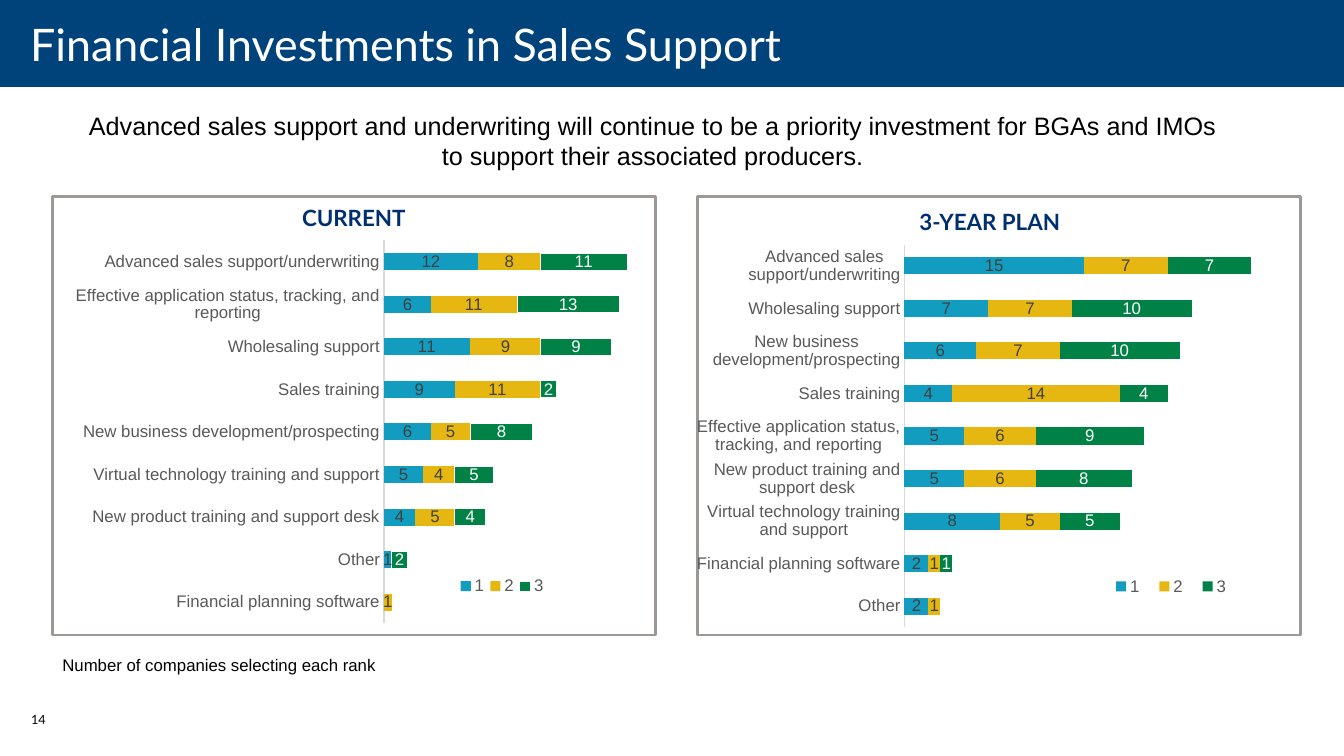
from lxml.etree import SubElement
from pptx import Presentation
from pptx.chart.data import CategoryChartData
from pptx.dml.color import RGBColor
from pptx.enum.chart import (XL_CHART_TYPE, XL_LABEL_POSITION,
                             XL_LEGEND_POSITION, XL_TICK_MARK)
from pptx.enum.shapes import MSO_SHAPE
from pptx.enum.text import MSO_ANCHOR, PP_ALIGN
from pptx.oxml import parse_xml
from pptx.oxml.ns import nsdecls, qn
from pptx.util import Pt

COLORS = {
    "banner": "00437B", "white": "FFFFFF", "black": "000000",
    "frame": "9D9795", "heading": "002F70", "axis_text": "595959",
    "axis_line": "D9D9D9", "label": "404040",
    "rank1": "129DC0", "rank2": "E6B711", "rank3": "008145",
}
RANKS = [("1", "rank1", "label"), ("2", "rank2", "label"), ("3", "rank3", "white")]
PANEL_TOP, PANEL_W, PANEL_H = 140.4, 430.56, 313.2
CHART_H = 274.3

# Each row: category, then the counts for ranks 1, 2 and 3, from bottom to top
CURRENT = [
    ("Financial planning software", 0, 1, 0),
    ("Other", 1, 0, 2),
    ("New product training and support desk", 4, 5, 4),
    ("Virtual technology training and support", 5, 4, 5),
    ("New business development/prospecting", 6, 5, 8),
    ("Sales training", 9, 11, 2),
    ("Wholesaling support", 11, 9, 9),
    ("Effective application status, tracking, and reporting", 6, 11, 13),
    ("Advanced sales support/underwriting", 12, 8, 11),
]
PLAN = [
    ("Other", 2, 1, 0),
    ("Financial planning software", 2, 1, 1),
    ("Virtual technology training and support", 8, 5, 5),
    ("New product training and support desk", 5, 6, 8),
    ("Effective application status, tracking, and reporting", 5, 6, 9),
    ("Sales training", 4, 14, 4),
    ("New business development/prospecting", 6, 7, 10),
    ("Wholesaling support", 7, 7, 10),
    ("Advanced sales support/underwriting", 15, 7, 7),
]


def rgb(name):
    return RGBColor.from_string(COLORS[name])


def style_font(font, size, color, name="Arial", bold=False):
    font.size, font.name, font.bold = Pt(size), name, bold
    font.color.rgb = rgb(color)


def add_rect(s, x, y, w, h, fill=None, line=None):
    sp = s.shapes.add_shape(MSO_SHAPE.RECTANGLE, Pt(x), Pt(y), Pt(w), Pt(h))
    sp.shadow.inherit = False
    if fill:
        sp.fill.solid()
        sp.fill.fore_color.rgb = rgb(fill)
    else:
        sp.fill.background()
    if line:
        sp.line.color.rgb = rgb(line)
        sp.line.width = Pt(2)
    else:
        sp.line.fill.background()
    return sp


def add_text(s, text, x, y, w, h, size, color="black", name="Arial", bold=False,
             align=PP_ALIGN.LEFT, anchor=MSO_ANCHOR.TOP):
    tf = s.shapes.add_textbox(Pt(x), Pt(y), Pt(w), Pt(h)).text_frame
    tf.word_wrap = True
    tf.vertical_anchor = anchor
    p = tf.paragraphs[0]
    p.text = text
    p.alignment = align
    style_font(p.font, size, color, name, bold)
    return tf


def set_layout(parent, index, x, y, w, h, inner=False):
    """Place a plot area or legend by fractions of the chart."""
    for old in parent.findall(qn("c:layout")):
        parent.remove(old)
    layout = parse_xml(f"<c:layout {nsdecls('c')}/>")
    manual = SubElement(layout, qn("c:manualLayout"))
    settings = [("layoutTarget", "inner")] if inner else []
    settings += [("xMode", "edge"), ("yMode", "edge"),
                 ("x", x), ("y", y), ("w", w), ("h", h)]
    for tag, value in settings:
        SubElement(manual, qn(f"c:{tag}")).set("val", str(value))
    parent.insert(index, layout)


def add_rank_chart(s, rows, x, y, w, h, plot_box, legend_box, outlined):
    data = CategoryChartData()
    data.categories = [row[0] for row in rows]
    for i, (rank, _, _) in enumerate(RANKS, 1):
        data.add_series(rank, [row[i] for row in rows])
    chart = s.shapes.add_chart(XL_CHART_TYPE.BAR_STACKED, Pt(x), Pt(y),
                               Pt(w), Pt(h), data).chart
    chart.has_title = False
    style_font(chart.font, 10, "black")

    axis = chart.category_axis
    axis.major_tick_mark = axis.minor_tick_mark = XL_TICK_MARK.NONE
    axis.format.line.color.rgb = rgb("axis_line")
    axis.format.line.width = Pt(0.75)
    style_font(axis.tick_labels.font, 12, "axis_text")
    values = chart.value_axis
    values.minimum_scale, values.maximum_scale = 0, 35
    values.has_major_gridlines = False
    values.visible = False

    plot = chart.plots[0]
    plot.gap_width, plot.overlap = 150, 100
    plot.vary_by_categories = False
    for series, (_, fill, label) in zip(plot.series, RANKS):
        series.format.fill.solid()
        series.format.fill.fore_color.rgb = rgb(fill)
        labels = series.data_labels
        labels.show_value = True
        labels.position = XL_LABEL_POSITION.CENTER
        labels.number_format = "0;;"  # zeros stay unlabelled
        labels.number_format_is_linked = False
        style_font(labels.font, 12, label)
    if outlined:
        line = plot.series[-1].format.line
        line.color.rgb = rgb("white")
        line.width = Pt(0.75)

    chart.has_legend = True
    legend = chart.legend
    legend.position = XL_LEGEND_POSITION.BOTTOM
    legend.include_in_layout = False
    style_font(legend.font, 12, "axis_text")
    root = chart.element
    set_layout(root.find(".//" + qn("c:plotArea")), 0, *plot_box, inner=True)
    set_layout(root.find(".//" + qn("c:legend")), 1, *legend_box)


def add_panel(s, x, heading, rows, dx, dy, chart_w, plot_box, legend_box,
              outlined=False):
    """Framed panel; dx and dy shift its heading and chart."""
    add_rect(s, x, PANEL_TOP, PANEL_W, PANEL_H, line="frame")
    top = PANEL_TOP + dy
    tf = add_text(s, heading, x + dx, top, PANEL_W, 31.7, 16, "heading", "Lato",
                  True, PP_ALIGN.CENTER, MSO_ANCHOR.MIDDLE)
    tf.paragraphs[0].line_spacing = 1.2
    tf.paragraphs[0].space_after = Pt(12.6)
    add_rank_chart(s, rows, x + dx, top + 33.9, chart_w, CHART_H,
                   plot_box, legend_box, outlined)


def add_banner(s, title, w, h):
    add_rect(s, 0, 0, w, h, fill="banner")
    tf = add_text(s, title, 0, -3.6, w, 69.8, 32, "white", "Lato",
                  anchor=MSO_ANCHOR.MIDDLE)
    tf.margin_left, tf.margin_right = Pt(21.6), Pt(14.4)
    tf.margin_top = tf.margin_bottom = 0


def main():
    prs = Presentation()
    prs.slide_width, prs.slide_height = Pt(960), Pt(540)
    s = prs.slides.add_slide(prs.slide_layouts[6])
    add_banner(s, "Financial Investments in Sales Support", 960, 62)
    add_text(s, "Advanced sales support and underwriting will continue to be a "
             "priority investment for BGAs and IMOs\v"
             "to support their associated producers.",
             22.3, 74.9, 887.8, 51.1, 18, align=PP_ALIGN.CENTER)
    add_panel(s, 37.44, "CURRENT", CURRENT, 0, -2.9, 566.6,
              (0.418, 0, 0.346, 1), (0.507, 0.87, 0.12, 0.065), outlined=True)
    add_panel(s, 498.24, "3-YEAR PLAN", PLAN, -6.5, 0, 459.4,
              (0.336, 0, 0.651, 1), (0.643, 0.86, 0.215, 0.065))
    add_text(s, "Number of companies selecting each rank",
             37.44, 464.4, 419, 21.6, 12)
    add_text(s, "14", 15.1, 504.7, 35.3, 28.8, 9, name="Lato")
    prs.save("out.pptx")


if __name__ == "__main__":
    main()
